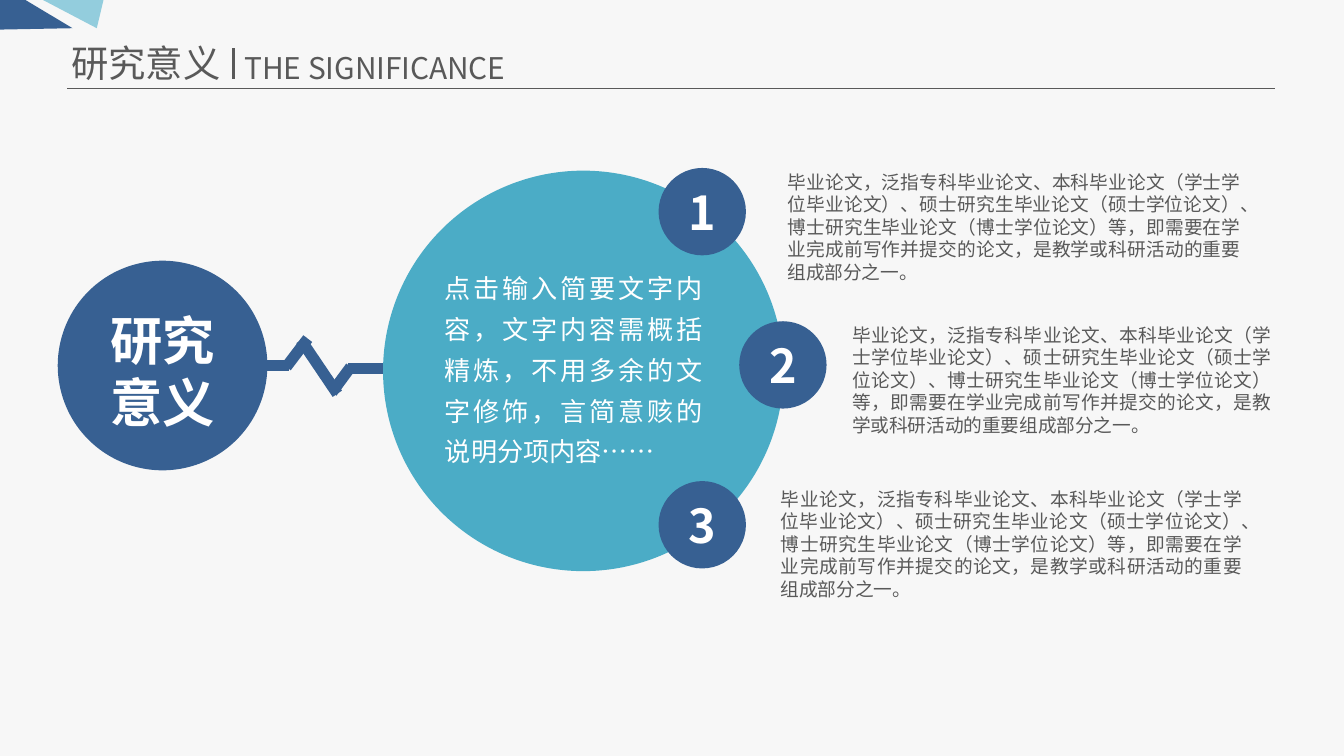
from collections import namedtuple
from dataclasses import dataclass

from lxml.etree import SubElement
from pptx import Presentation
from pptx.dml.color import RGBColor
from pptx.enum.shapes import MSO_CONNECTOR as Connector, MSO_SHAPE as Shape
from pptx.enum.text import MSO_ANCHOR as Anchor, MSO_AUTO_SIZE as AutoSize, PP_ALIGN as Align
from pptx.oxml.ns import qn
from pptx.util import Pt

PX = 9144  # EMU per px, at 100 px to the inch
Box = namedtuple("Box", "left top width height")


@dataclass(frozen=True)
class Theme:
    font: str = "Noto Sans CJK SC"
    paper: str = "F7F7F7"
    navy: str = "376092"
    teal: str = "4BACC6"
    sky: str = "93CDDD"
    ink: str = "595959"
    white: str = "FFFFFF"
    hub: int = 28
    badge: int = 25
    title: int = 20
    subtitle: int = 16
    summary: int = 14
    detail: int = 10


THEME = Theme()

SUMMARY = "点击输入简要文字内容，文字内容需概括精炼，不用多余的文字修饰，言简意赅的说明分项内容……"
DETAIL = ("毕业论文，泛指专科毕业论文、本科毕业论文（学士学位毕业论文）、"
          "硕士研究生毕业论文（硕士学位论文）、博士研究生毕业论文（博士学位论文）等，"
          "即需要在学业完成前写作并提交的论文，是教学或科研活动的重要组成部分之一。")


def emu(*lengths):
    return [length * PX for length in lengths]


def inside(box, left, top, width, height):
    return Box(box.left + left, box.top + top, width, height)


def paint(shape, color):
    shape.shadow.inherit = False
    shape.fill.solid()
    shape.fill.fore_color.rgb = RGBColor.from_string(color)
    shape.line.fill.background()


def write(frame, lines, size, color, align, bold=False, spacing=None):
    frame.text = "\n".join(lines)
    for paragraph in frame.paragraphs:
        paragraph.alignment = align
        if spacing:
            paragraph.line_spacing = spacing
        font = paragraph.font
        font.size, font.bold, font.name = Pt(size), bold, THEME.font
        font.color.rgb = RGBColor.from_string(color)
        # East Asian glyphs need their own typeface entry
        defaults = paragraph._p.pPr.find(qn("a:defRPr"))
        SubElement(defaults, qn("a:ea")).set("typeface", THEME.font)


def add_text(slide, box, lines, size, color, align, wrap=True, inset=0, **style):
    frame = slide.shapes.add_textbox(*emu(*box)).text_frame
    frame.word_wrap = wrap
    frame.auto_size = AutoSize.SHAPE_TO_FIT_TEXT
    frame.margin_left = frame.margin_right = inset * 2 * PX
    frame.margin_top = frame.margin_bottom = inset * PX
    write(frame, lines, size, color, align, **style)


def add_circle(slide, box, color):
    circle = slide.shapes.add_shape(Shape.OVAL, *emu(*box))
    paint(circle, color)
    return circle


def add_line(slide, box, start, end, color, weight):
    points = [box.left + start[0], box.top + start[1], box.left + end[0], box.top + end[1]]
    line = slide.shapes.add_connector(Connector.STRAIGHT, *emu(*points))
    line.line.color.rgb = RGBColor.from_string(color)
    line.line.width = Pt(weight)
    SubElement(line._element.spPr, qn("a:effectLst"))


def add_corner(slide, box):
    shards = [(THEME.sky, [(32, 0), (72, 21), (77, 0)]),
              (THEME.navy, [(54, 21), (19, 0), (0, 0), (0, 22)])]
    for color, points in shards:
        first, *rest = [(box.left + x, box.top + y) for x, y in points]
        builder = slide.shapes.build_freeform(*first, scale=PX)
        builder.add_line_segments(rest, close=True)
        paint(builder.convert_to_shape(), color)


def add_header(slide, box):
    add_line(slide, box, (7, 41), (906, 41), THEME.ink, 0.75)
    add_text(slide, inside(box, 0, 0, 132, 44), ["研究意义"],
             THEME.title, THEME.ink, Align.LEFT, wrap=False, inset=5)
    add_text(slide, inside(box, 129, 7, 225, 37), ["THE SIGNIFICANCE"],
             THEME.subtitle, THEME.ink, Align.LEFT, wrap=False, inset=5)
    add_line(slide, box, (131, 11), (131, 34), THEME.ink, 1.5)


def add_hub(slide, box):
    add_circle(slide, box, THEME.navy)
    add_text(slide, inside(box, 39, 35, 78, 94), ["研究", "意义"],
             THEME.hub, THEME.white, Align.CENTER, wrap=False, bold=True)


def add_pulse(slide, box):
    strokes = [((0, 20), (49, 20)), ((93, 22), (134, 22)), ((47, 21), (63, 0)),
               ((81, 40), (95, 21)), ((85, 41), (58, 1))]
    for start, end in strokes:
        add_line(slide, box, start, end, THEME.navy, 6)


def add_summary(slide, box):
    add_circle(slide, box, THEME.teal)
    add_text(slide, inside(box, 46, 69, 192, 153), [SUMMARY],
             THEME.summary, THEME.white, Align.JUSTIFY, spacing=1.3)


def add_detail(slide, box, number, indent):
    """Numbered badge at the left of the box, text from the indent to its right edge."""
    badge = add_circle(slide, inside(box, 0, 0, 65, 65), THEME.navy)
    badge.text_frame.vertical_anchor = Anchor.MIDDLE
    write(badge.text_frame, [str(number)], THEME.badge, THEME.white, Align.CENTER, bold=True)
    add_text(slide, inside(box, indent, box.height - 84, box.width - indent, 84), [DETAIL],
             THEME.detail, THEME.ink, Align.JUSTIFY)


def main():
    deck = Presentation()
    deck.slide_width = 1000 * PX
    deck.slide_height = deck.slide_width * 9 // 16
    slide = deck.slides.add_slide(deck.slide_layouts[6])
    slide.background.fill.solid()
    slide.background.fill.fore_color.rgb = RGBColor.from_string(THEME.paper)

    # Top band
    add_corner(slide, Box(0, 0, 77, 22))
    add_header(slide, Box(43, 25, 906, 44))

    # Topic linked to its summary
    add_hub(slide, Box(43, 194, 156, 156))
    add_pulse(slide, Box(166, 252, 134, 41))
    add_summary(slide, Box(285, 127, 298, 298))

    # Numbered details around the summary circle
    details = [(Box(490, 125, 433, 86), 96),
               (Box(550, 239, 396, 86), 84),
               (Box(490, 358, 434, 89), 91)]
    for number, (box, indent) in enumerate(details, start=1):
        add_detail(slide, box, number, indent)

    deck.save("out.pptx")


if __name__ == "__main__":
    main()
